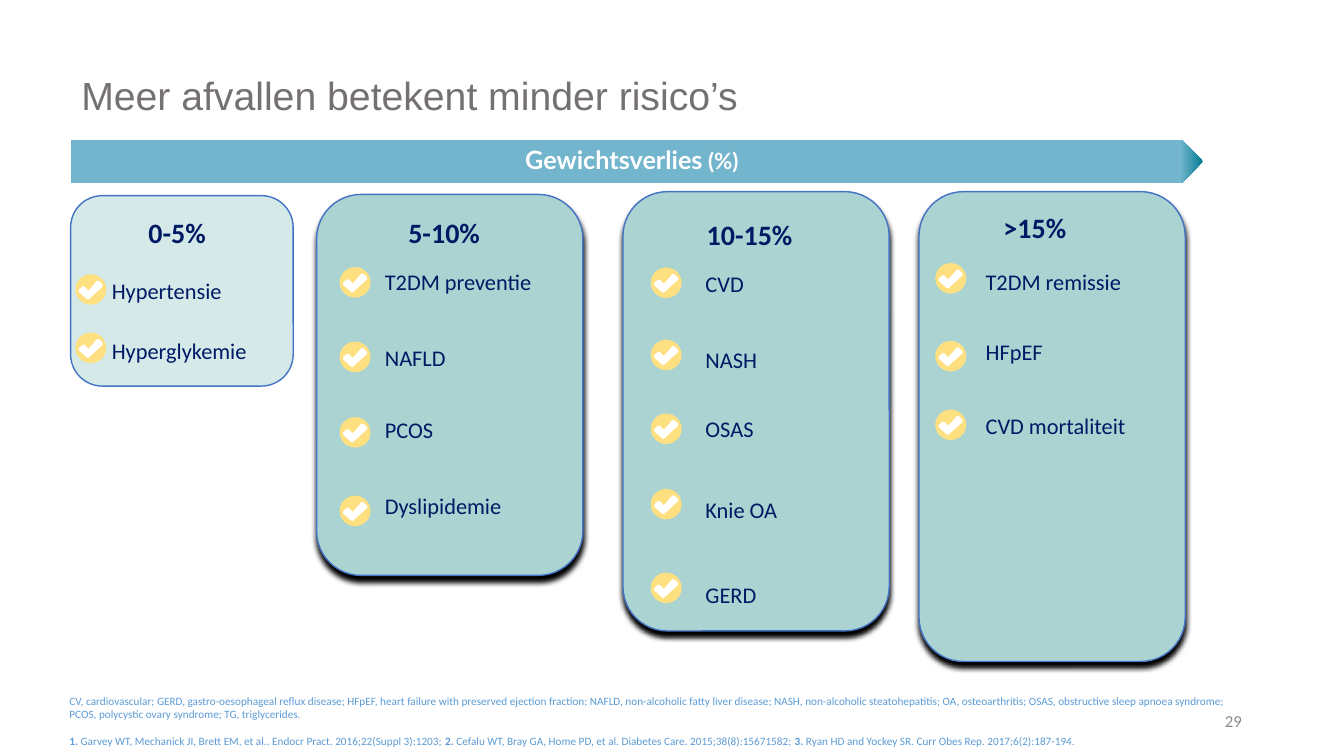
from dataclasses import dataclass

from lxml.etree import SubElement
from pptx import Presentation
from pptx.dml.color import RGBColor
from pptx.enum.shapes import MSO_SHAPE as Preset
from pptx.enum.text import MSO_ANCHOR as Anchor, PP_ALIGN as Align
from pptx.oxml.ns import qn
from pptx.util import Cm, Pt


@dataclass(frozen=True)
class Theme:
    title: str = "767171"
    ink: str = "001965"
    note: str = "5B9BD5"
    number: str = "8C8C8C"
    white: str = "FFFFFF"
    banner: str = "72B5CC"
    banner_tip: str = "007C92"
    pale: str = "D4E9E8"
    teal: str = "AAD3D1"
    outline: str = "4472C4"
    tick: str = "FFE080"
    body_font: str = "Calibri"
    title_font: str = "Arial"
    banner_font: str = "Lato"
    title_size: int = 28
    heading_size: int = 20
    banner_size: int = 18
    label_size: int = 16
    number_size: int = 12
    note_size: int = 8


THEME = Theme()


@dataclass(frozen=True)
class Panel:
    box: tuple      # left, top, width, height in cm
    heading: tuple  # text, then offset from the panel corner
    tick_left: float
    label_left: float
    items: tuple    # label, tick offset, label offset from the panel top
    raised: bool = True


PANELS = (
    Panel((1.78, 4.93, 5.61, 4.8), ("0-5%", 1.96, 0.33), 0.12, 1.04,
          (("Hypertensie", 1.98, 1.93), ("Hyperglykemie", 3.45, 3.43)), raised=False),
    Panel((7.98, 4.9, 6.71, 9.6), ("5-10%", 2.31, 0.36), 0.58, 1.72,
          (("T2DM preventie", 1.83, 1.73), ("NAFLD", 3.71, 3.63),
           ("PCOS", 5.61, 5.44), ("Dyslipidemie", 7.59, 7.37))),
    Panel((15.7, 4.83, 6.71, 11.07), ("10-15%", 2.11, 0.48), 0.7, 2.08,
          (("CVD", 1.91, 1.85), ("NASH", 3.73, 3.76), ("OSAS", 5.59, 5.49),
           ("Knie OA", 7.49, 7.54), ("GERD", 9.6, 9.68))),
    Panel((23.16, 4.83, 6.71, 11.84), (">15%", 2.13, 0.3), 0.41, 1.68,
          (("T2DM remissie", 1.8, 1.8), ("HFpEF", 3.76, 3.56),
           ("CVD mortaliteit", 5.49, 5.41))),
)

# Check mark outline in cm, from the corner of its disc
CHECK = ((0.33, 0.41), (0.43, 0.3), (0.53, 0.18), (0.57, 0.16), (0.61, 0.18),
         (0.69, 0.26), (0.69, 0.31), (0.35, 0.62), (0.32, 0.64), (0.28, 0.62),
         (0.1, 0.46), (0.08, 0.42), (0.1, 0.38), (0.18, 0.31), (0.23, 0.31))

ABBREVIATIONS = (
    "CV, cardiovascular; GERD, gastro-oesophageal reflux disease; HFpEF, heart failure "
    "with preserved ejection fraction; NAFLD, non-alcoholic fatty liver disease; NASH, "
    "non-alcoholic steatohepatitis; OA, osteoarthritis; OSAS, obstructive sleep apnoea "
    "syndrome; PCOS, polycystic ovary syndrome; TG, triglycerides.")
REFERENCES = (
    "Garvey WT, Mechanick JI, Brett EM, et al.. Endocr Pract. 2016;22(Suppl 3):1203; ",
    "Cefalu WT, Bray GA, Home PD, et al. Diabetes Care. 2015;38(8):15671582; ",
    "Ryan HD and Yockey SR. Curr Obes Rep. 2017;6(2):187-194.",
)


def lengths(box):
    return [Cm(value) for value in box]


def set_font(font, size, color, name=THEME.body_font, bold=False):
    font.size, font.name, font.bold = Pt(size), name, bold
    font.color.rgb = RGBColor.from_string(color)


def add_text_frame(shapes, box, anchor=Anchor.TOP, inset=True):
    frame = shapes.add_textbox(*lengths(box)).text_frame
    frame.word_wrap, frame.vertical_anchor = True, anchor
    if not inset:
        frame.margin_left = frame.margin_top = frame.margin_right = frame.margin_bottom = 0
    return frame


def add_label(shapes, box, text, size, bold=False):
    para = add_text_frame(shapes, box, inset=False).paragraphs[0]
    para.text, para.line_spacing = text, 1.2
    set_font(para.font, size, THEME.ink, bold=bold)


def paint(shape, fill, outline=None):
    shape.shadow.inherit = False
    shape.fill.solid()
    shape.fill.fore_color.rgb = RGBColor.from_string(fill)
    if outline:
        shape.line.color.rgb = RGBColor.from_string(outline)
        shape.line.width = Pt(1)
    else:
        shape.line.fill.background()


def drop_shadow(shape):
    effects = shape._element.spPr.find(qn("a:effectLst"))
    shadow = SubElement(effects, qn("a:outerShdw"), blurRad=str(Pt(4)), dist=str(Pt(4)),
                        dir="5400000", algn="t", rotWithShape="0")
    SubElement(shadow, qn("a:srgbClr"), val="000000")


def add_title(page, box):
    para = add_text_frame(page.shapes, box, Anchor.MIDDLE).paragraphs[0]
    para.text, para.line_spacing = "Meer afvallen betekent minder risico’s", 0.9
    set_font(para.font, THEME.title_size, THEME.title, THEME.title_font)


def add_banner(page, box):
    arrow = page.shapes.add_shape(Preset.PENTAGON, *lengths(box))
    arrow.shadow.inherit = False
    arrow.line.fill.background()
    # The dark shade covers only the tip
    arrow.fill.gradient()
    arrow.fill.gradient_angle = 180
    shades = ((0, THEME.banner_tip), (0.02, THEME.banner))
    for stop, (position, color) in zip(arrow.fill.gradient_stops, shades):
        stop.position = position
        stop.color.rgb = RGBColor.from_string(color)
    arrow.text_frame.vertical_anchor = Anchor.MIDDLE
    para = arrow.text_frame.paragraphs[0]
    para.alignment, para.line_spacing = Align.CENTER, 0.9
    for text, size in (("Gewichtsverlies", THEME.banner_size), (" (%)", THEME.label_size)):
        span = para.add_run()
        span.text = text
        set_font(span.font, size, THEME.white, THEME.banner_font, bold=True)


def add_tick(shapes, left, top):
    disc = shapes.add_shape(Preset.OVAL, *lengths((left, top, 0.78, 0.77)))
    paint(disc, THEME.tick)
    points = [(Cm(left + x), Cm(top + y)) for x, y in CHECK]
    outline = shapes.build_freeform(*points[0])
    outline.add_line_segments(points[1:], close=True)
    paint(outline.convert_to_shape(), THEME.white)


def add_panel(page, panel):
    left, top, width, height = panel.box
    shapes = page.shapes.add_group_shape().shapes
    card = shapes.add_shape(Preset.ROUNDED_RECTANGLE, *lengths(panel.box))
    paint(card, THEME.teal if panel.raised else THEME.pale, THEME.outline)
    if panel.raised:
        drop_shadow(card)
    heading, x, y = panel.heading
    add_label(shapes, (left + x, top + y, 3.2, 0.91), heading, THEME.heading_size, bold=True)
    for label, tick_top, label_top in panel.items:
        add_tick(shapes, left + panel.tick_left, top + tick_top)
        add_label(shapes, (left + panel.label_left, top + label_top, 4.57, 0.76),
                  label, THEME.label_size)


def add_footnotes(page, box):
    frame = add_text_frame(page.shapes, box, Anchor.BOTTOM, inset=False)
    abbreviations, references = frame.paragraphs[0], frame.add_paragraph()
    abbreviations.text = ABBREVIATIONS
    references.space_before = Pt(3)
    for para in frame.paragraphs:
        para.space_after = Pt(6)
        set_font(para.font, THEME.note_size, THEME.note)
    for number, reference in enumerate(REFERENCES, 1):
        for text, bold in ((f"{number}. ", True), (reference, False)):
            span = references.add_run()
            span.text = text
            set_font(span.font, THEME.note_size, THEME.note, bold=bold)


def add_page_number(page, box):
    para = add_text_frame(page.shapes, box, Anchor.MIDDLE).paragraphs[0]
    para.text, para.alignment = "29", Align.RIGHT
    set_font(para.font, THEME.number_size, THEME.number)


def main():
    deck = Presentation()
    deck.slide_width, deck.slide_height = Cm(33.87), Cm(19.05)
    page = deck.slides.add_slide(deck.slide_layouts[6])
    add_title(page, (1.8, 0.66, 31.5, 3.61))
    add_page_number(page, (23.93, 17.65, 7.62, 1.02))
    for panel in PANELS:
        add_panel(page, panel)
    add_footnotes(page, (1.75, 17.48, 29.49, 1.35))
    add_banner(page, (1.8, 3.53, 28.52, 1.07))
    deck.save("out.pptx")


if __name__ == "__main__":
    main()
